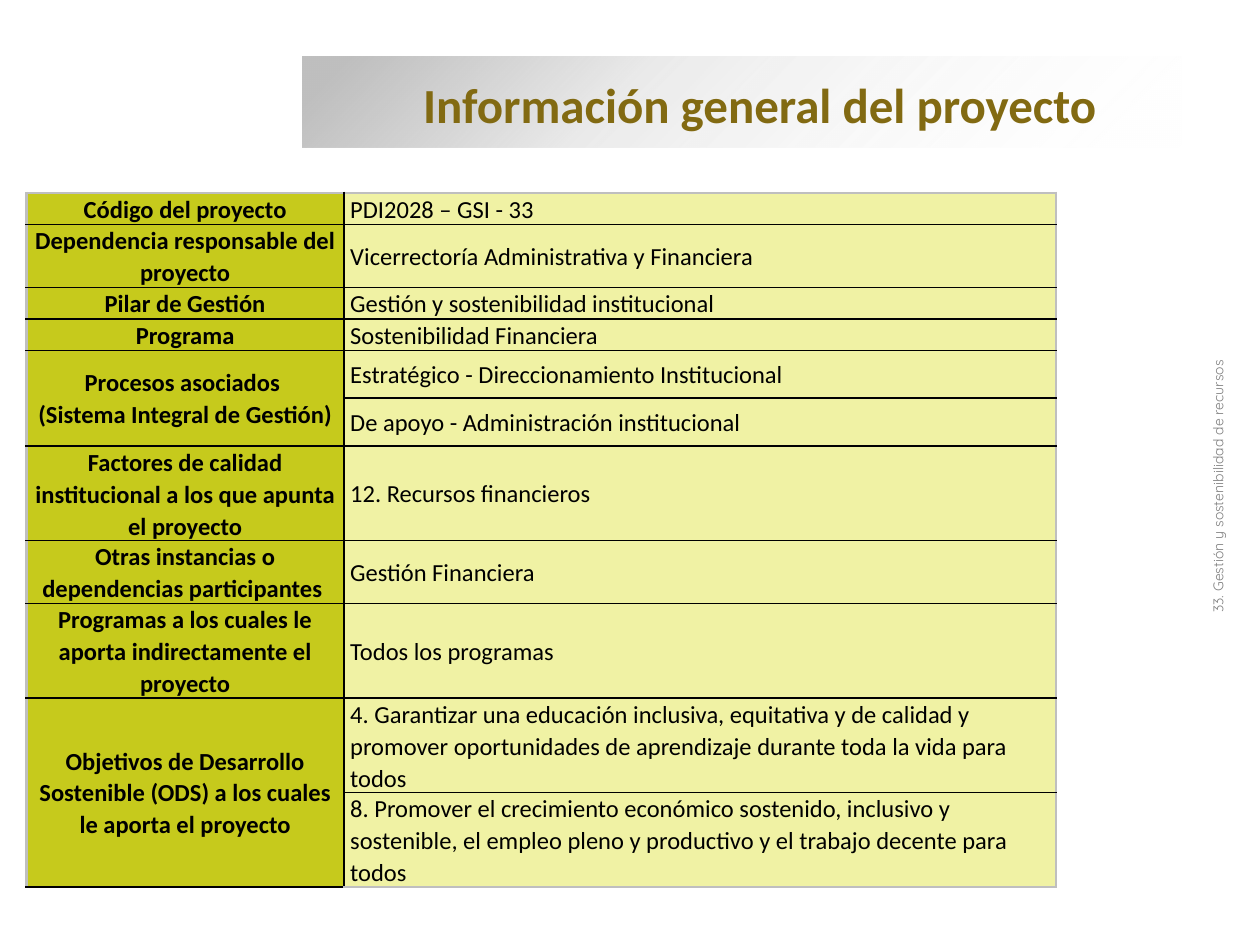
from typing import NamedTuple

from lxml.etree import SubElement
from pptx import Presentation
from pptx.dml.color import RGBColor
from pptx.enum.shapes import MSO_SHAPE
from pptx.enum.text import MSO_ANCHOR, PP_ALIGN
from pptx.oxml import parse_xml
from pptx.oxml.ns import nsdecls, qn
from pptx.util import Inches, Pt

BLACK = RGBColor(0x00, 0x00, 0x00)
WHITE = RGBColor(0xFF, 0xFF, 0xFF)
SILVER = RGBColor(0xBF, 0xBF, 0xBF)
GRAY = RGBColor(0x80, 0x80, 0x80)
GOLD = RGBColor(0x82, 0x6A, 0x12)
OLIVE = RGBColor(0xC6, 0xCA, 0x1C)
PALE_YELLOW = RGBColor(0xF0, 0xF2, 0xA4)

COLUMN_WIDTHS = (2.52, 5.65)


class Value(NamedTuple):
    text: str
    height: float
    alignment: PP_ALIGN = PP_ALIGN.LEFT


class Topic(NamedTuple):
    label: str
    values: tuple[Value, ...]


TOPICS = (
    Topic("Código del proyecto", (Value("PDI2028 – GSI - 33", 0.25),)),
    Topic("Dependencia responsable del proyecto",
          (Value("Vicerrectoría Administrativa y Financiera", 0.5),)),
    Topic("Pilar de Gestión", (Value("Gestión y sostenibilidad institucional", 0.25),)),
    Topic("Programa", (Value("Sostenibilidad Financiera", 0.25, PP_ALIGN.JUSTIFY),)),
    Topic("Procesos asociados \n(Sistema Integral de Gestión)", (
        Value("Estratégico - Direccionamiento Institucional", 0.38),
        Value("De apoyo - Administración institucional", 0.38))),
    Topic("Factores de calidad institucional a los que apunta el proyecto",
          (Value("12. Recursos financieros", 0.75),)),
    Topic("Otras instancias o dependencias participantes ",
          (Value("Gestión Financiera", 0.5, PP_ALIGN.JUSTIFY),)),
    Topic("Programas a los cuales le aporta indirectamente el proyecto",
          (Value("Todos los programas", 0.75),)),
    Topic("Objetivos de Desarrollo Sostenible (ODS) a los cuales le aporta el proyecto", (
        Value("4. Garantizar una educación inclusiva, equitativa y de calidad y promover "
              "oportunidades de aprendizaje durante toda la vida para todos", 0.75),
        Value("8. Promover el crecimiento económico sostenido, inclusivo y sostenible, el "
              "empleo pleno y productivo y el trabajo decente para todos", 0.75))),
)


def write_text(text_frame, text: str, *, size: float, color: RGBColor, font: str = "Calibri",
               bold: bool = False, alignment: PP_ALIGN = PP_ALIGN.LEFT,
               line_spacing: float = 1.0) -> None:
    text_frame.word_wrap = True
    paragraph = text_frame.paragraphs[0]
    paragraph.text = text
    paragraph.alignment = alignment
    paragraph.line_spacing = line_spacing
    for run in paragraph.runs:
        run.font.name = font
        run.font.size = Pt(size)
        run.font.bold = bold
        run.font.color.rgb = color


def fill_with_fade(shape) -> None:
    """Fade the shape diagonally from silver to transparent white."""
    shape.fill.background()
    properties = shape._element.spPr
    stops = "".join(
        f'<a:gs pos="{position * 1000}"><a:srgbClr val="{color}">'
        f'<a:alpha val="{alpha * 1000}"/></a:srgbClr></a:gs>'
        for position, color, alpha in ((5, SILVER, 100), (37, SILVER, 31), (100, WHITE, 0)))
    gradient = parse_xml(f'<a:gradFill {nsdecls("a")} rotWithShape="1"><a:gsLst>{stops}</a:gsLst>'
                         '<a:lin ang="2700000" scaled="0"/></a:gradFill>')
    properties.replace(properties.find(qn("a:noFill")), gradient)


def add_title(slide) -> None:
    group = slide.shapes.add_group_shape()
    band = group.shapes.add_shape(MSO_SHAPE.RECTANGLE, Inches(2.4), Inches(0.45),
                                  Inches(6.98), Inches(0.72))
    band.shadow.inherit = False
    band.line.fill.background()
    fill_with_fade(band)
    title = group.shapes.add_textbox(Inches(3.26), Inches(0.54), Inches(6.2), Inches(0.57))
    title.text_frame.vertical_anchor = MSO_ANCHOR.MIDDLE
    write_text(title.text_frame, "Información general del proyecto",
               size=28, color=GOLD, bold=True)


def set_borders(cell, outer_sides: set[str]) -> None:
    """Draw outer sides in silver and inner sides in black."""
    properties = cell._tc.get_or_add_tcPr()
    for position, side in enumerate("LRTB"):
        color, width = (SILVER, 1.5) if side in outer_sides else (BLACK, 1)
        border = SubElement(properties, qn(f"a:ln{side}"), w=str(Pt(width)))
        fill = SubElement(border, qn("a:solidFill"))
        SubElement(fill, qn("a:srgbClr"), val=str(color))
        properties.insert(position, border)


def format_cell(cell, color: RGBColor, side_margin: float) -> None:
    cell.fill.solid()
    cell.fill.fore_color.rgb = color
    cell.vertical_anchor = MSO_ANCHOR.MIDDLE
    cell.margin_left = cell.margin_right = Inches(side_margin)
    cell.margin_top = cell.margin_bottom = 0


def add_project_table(slide) -> None:
    values = [value for topic in TOPICS for value in topic.values]
    table = slide.shapes.add_table(
        len(values), 2, Inches(0.21), Inches(1.53), Inches(sum(COLUMN_WIDTHS)),
        Inches(sum(value.height for value in values))).table
    table.first_row = table.horz_banding = False
    for column, width in zip(table.columns, COLUMN_WIDTHS):
        column.width = Inches(width)

    for index, value in enumerate(values):
        table.rows[index].height = Inches(value.height)
        ends = {"T"} if index == 0 else {"B"} if index == len(values) - 1 else set()
        label_cell, value_cell = table.cell(index, 0), table.cell(index, 1)
        format_cell(label_cell, OLIVE, 0.04)
        format_cell(value_cell, PALE_YELLOW, 0.05)
        set_borders(label_cell, ends | {"L"})
        set_borders(value_cell, ends | {"R"})
        write_text(value_cell.text_frame, value.text, size=14, color=BLACK,
                   alignment=value.alignment, line_spacing=1.07)

    first_row = 0
    for topic in TOPICS:
        cell = table.cell(first_row, 0)
        write_text(cell.text_frame, topic.label, size=14, color=BLACK, bold=True,
                   alignment=PP_ALIGN.CENTER, line_spacing=1.07)
        last_row = first_row + len(topic.values) - 1
        if last_row > first_row:
            cell.merge(table.cell(last_row, 0))
        first_row = last_row + 1


def add_side_note(slide) -> None:
    note = slide.shapes.add_textbox(Inches(7.25), Inches(3.74), Inches(4.84), Inches(0.24))
    note.rotation = 270
    write_text(note.text_frame, "33. Gestión y sostenibilidad de recursos", size=8,
               color=GRAY, font="Quicksand", alignment=PP_ALIGN.CENTER)


def main() -> None:
    presentation = Presentation()
    presentation.slide_width = Inches(10)
    presentation.slide_height = Inches(7.5)
    slide = presentation.slides.add_slide(presentation.slide_layouts[6])
    add_title(slide)
    add_project_table(slide)
    add_side_note(slide)
    presentation.save("out.pptx")


if __name__ == "__main__":
    main()
